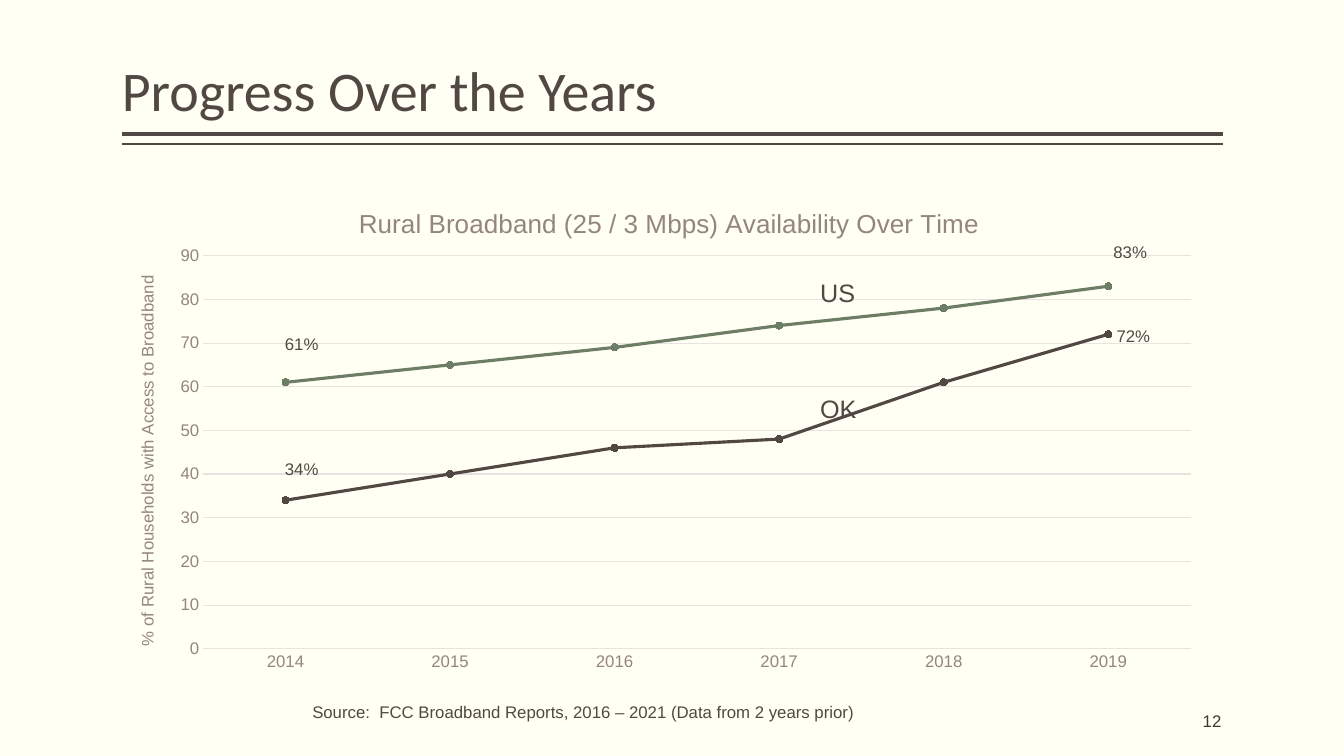
"""Build the slide on rural broadband availability over the years."""
from dataclasses import dataclass

from lxml import etree
from pptx import Presentation
from pptx import util as u
from pptx.chart import data as chart_data
from pptx.dml import color
from pptx.enum import chart as chart_enum
from pptx.enum import shapes, text
from pptx.oxml import ns

COLORS = {
    "background": "FFFFF3",
    "ink": "514843",
    "muted": "94867E",
    "grid": "E6E3E1",
    "green": "6D7D66",
    "number": "3D3632",
}
YEARS = ["2014", "2015", "2016", "2017", "2018", "2019"]
RULE_LEFT, RULE_RIGHT = 3.07, 30.81


@dataclass
class Label:
    """A text box, with its place in centimetres."""

    words: str
    left: float
    top: float
    width: float
    height: float = 0.77
    size: int = 12


@dataclass
class Rule:
    """A horizontal line under the title."""

    top: float
    weight: float


@dataclass
class Trend:
    """One line of the chart."""

    name: str
    values: list[int]
    color: str


LABELS = [
    Label("Source:  FCC Broadband Reports, 2016 – 2021 (Data from 2 years prior)", 7.62, 17.55, 15.52),
    Label("OK", 20.42, 9.78, 4.37, 1.03, 18),
    Label("US", 20.42, 6.86, 4.37, 1.03, 18),
    Label("61%", 6.93, 8.28, 1.37),
    Label("34%", 6.93, 11.43, 1.37),
    Label("83%", 27.81, 5.97, 1.37),
    Label("72%", 27.89, 8.08, 1.37),
]
RULES = [Rule(3.38, 3), Rule(3.63, 1)]
TRENDS = [
    Trend("OK", [34, 40, 46, 48, 61, 72], "ink"),
    Trend("US", [61, 65, 69, 74, 78, 83], "green"),
]


def rgb(name: str) -> color.RGBColor:
    """Look up a named colour."""
    return color.RGBColor.from_string(COLORS[name])


def style_font(font, size: float, name: str, face: str = "Arial") -> None:
    """Set size, colour and typeface."""
    font.size, font.name, font.bold = u.Pt(size), face, False
    font.color.rgb = rgb(name)


def style_line(line, name: str, weight: float) -> None:
    """Set colour and weight of a line."""
    line.color.rgb = rgb(name)
    line.width = u.Pt(weight)


def add_label(slide, label: Label, name: str = "ink"):
    """Add a text box and return its frame."""
    box = slide.shapes.add_textbox(u.Cm(label.left), u.Cm(label.top), u.Cm(label.width), u.Cm(label.height))
    frame = box.text_frame
    frame.word_wrap = True
    frame.text = label.words
    style_font(frame.paragraphs[0].runs[0].font, label.size, name)
    return frame


def add_rule(slide, rule: Rule) -> None:
    """Draw a line across the slide."""
    line = slide.shapes.add_connector(
        shapes.MSO_CONNECTOR.STRAIGHT, u.Cm(RULE_RIGHT), u.Cm(rule.top), u.Cm(RULE_LEFT), u.Cm(rule.top)
    )
    style_line(line.line, "ink", rule.weight)
    etree.SubElement(line._element.spPr, ns.qn("a:effectLst"))


def place(element, index: int, **fractions: float) -> None:
    """Give a chart part a manual layout in fractions of the chart."""
    for old in element.findall(ns.qn("c:layout")):
        element.remove(old)
    layout = etree.Element(ns.qn("c:layout"))
    manual = etree.SubElement(layout, ns.qn("c:manualLayout"))
    if "w" in fractions:
        etree.SubElement(manual, ns.qn("c:layoutTarget"), val="inner")
    for mode in ("xMode", "yMode"):
        etree.SubElement(manual, ns.qn(f"c:{mode}"), val="edge")
    for key, value in fractions.items():
        etree.SubElement(manual, ns.qn(f"c:{key}"), val=str(value))
    element.insert(index, layout)


def add_title(owner, words: str, size: float, x: float, y: float) -> None:
    """Title a chart or an axis."""
    title = owner.chart_title if hasattr(owner, "chart_title") else owner.axis_title
    title.text_frame.text = words
    style_font(title.text_frame.paragraphs[0].runs[0].font, size, "muted")
    place(title._element, 1, x=x, y=y)


def add_trends(slide) -> None:
    """Add the line chart."""
    data = chart_data.CategoryChartData()
    data.categories = YEARS
    for trend in TRENDS:
        data.add_series(trend.name, trend.values)
    chart = slide.shapes.add_chart(
        chart_enum.XL_CHART_TYPE.LINE_MARKERS, u.Cm(2.82), u.Cm(4.45), u.Cm(27.74), u.Cm(12.7), data
    ).chart
    chart.has_legend = False
    style_font(chart.font, 10, "ink")
    add_title(chart, "Rural Broadband (25 / 3 Mbps) Availability Over Time", 18.6, 0.22, 0.05)
    chart.plots[0].vary_by_categories = False

    years, shares = chart.category_axis, chart.value_axis
    for axis in (years, shares):
        axis.major_tick_mark = axis.minor_tick_mark = chart_enum.XL_TICK_MARK.NONE
        style_font(axis.tick_labels.font, 12, "muted")
    style_line(years.format.line, "grid", 0.75)
    shares.format.line.fill.background()
    style_line(shares.major_gridlines.format.line, "grid", 0.75)
    shares.minimum_scale, shares.maximum_scale, shares.major_unit = 0, 90, 10
    add_title(shares, "% of Rural Households with Access to Broadband", 12, 0.02, 0.19)

    for trend, series in zip(TRENDS, chart.plots[0].series):
        series.smooth = False
        style_line(series.format.line, trend.color, 2.25)
        marker = series.marker
        marker.style, marker.size = chart_enum.XL_MARKER_STYLE.CIRCLE, 5
        marker.format.fill.solid()
        marker.format.fill.fore_color.rgb = rgb(trend.color)
        marker.format.line.color.rgb = rgb(trend.color)
    plot_area = chart._chartSpace.find(".//" + ns.qn("c:plotArea"))
    place(plot_area, 0, x=0.083, y=0.157, w=0.897, h=0.78)


def main() -> None:
    """Build and save the presentation."""
    presentation = Presentation()
    presentation.slide_width, presentation.slide_height = u.Cm(33.87), u.Cm(19.05)
    slide = presentation.slides.add_slide(presentation.slide_layouts[5])
    slide.background.fill.solid()
    slide.background.fill.fore_color.rgb = rgb("background")

    title = slide.shapes.title
    title.left, title.top, title.width, title.height = u.Cm(RULE_LEFT), u.Cm(0.2), u.Cm(27.74), u.Cm(3.05)
    frame = title.text_frame
    frame.text = "Progress Over the Years"
    frame.vertical_anchor = text.MSO_ANCHOR.BOTTOM
    frame.margin_left = frame.margin_right = 0
    paragraph = frame.paragraphs[0]
    paragraph.alignment, paragraph.line_spacing = text.PP_ALIGN.LEFT, 0.9
    style_font(paragraph.runs[0].font, 40, "ink", "Calibri")

    for rule in RULES:
        add_rule(slide, rule)
    add_trends(slide)
    for label in LABELS:
        add_label(slide, label)
    number = add_label(slide, Label("12", 25.7, 17.65, 5.08, 1.02), "number")
    number.margin_left = number.margin_right = 0
    number.vertical_anchor = text.MSO_ANCHOR.MIDDLE
    number.paragraphs[0].alignment = text.PP_ALIGN.RIGHT
    presentation.save("out.pptx")


if __name__ == "__main__":
    main()
